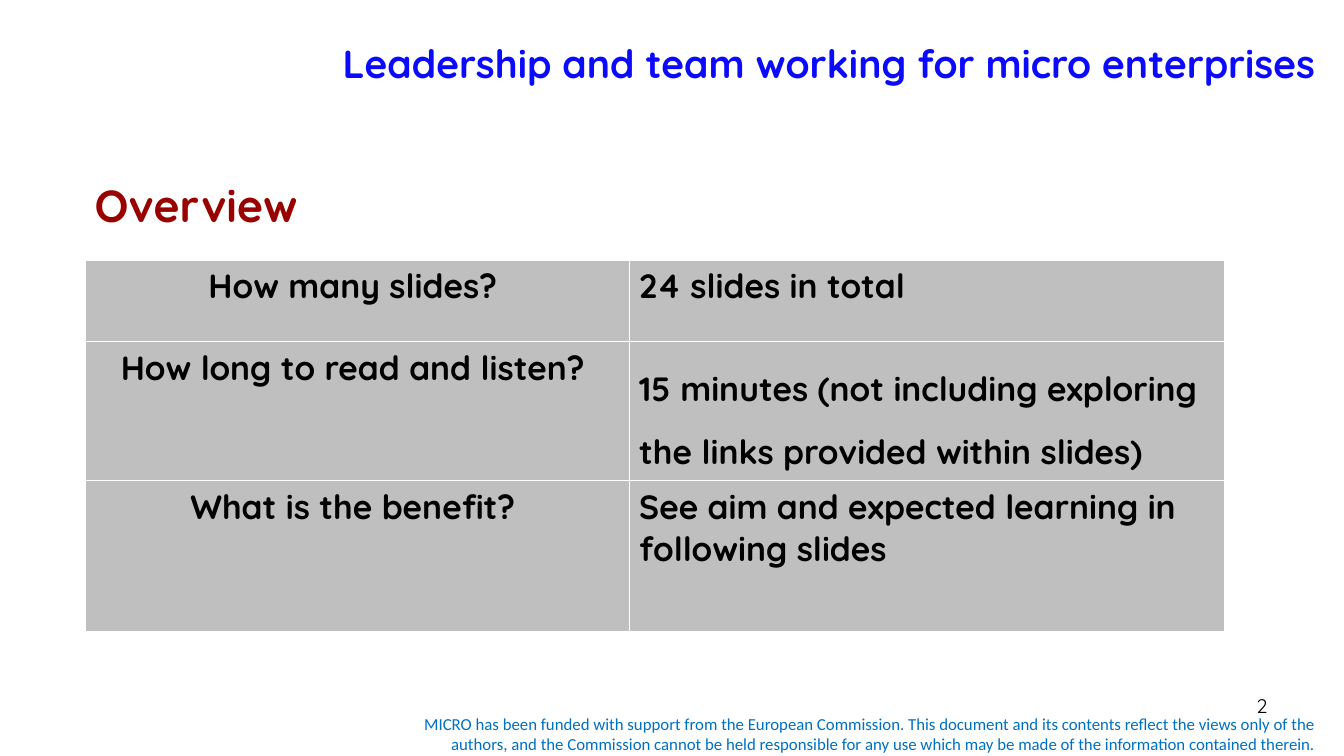
from pptx import Presentation
from pptx.dml.color import RGBColor
from pptx.enum.text import MSO_ANCHOR, PP_ALIGN
from pptx.oxml import parse_xml
from pptx.oxml.ns import nsdecls
from pptx.util import Inches, Pt

HUES = {"blue": "0B0AFD", "red": "990000", "sky": "0070C0",
        "black": "000000", "gray": "BFBFBF", "white": "FFFFFF"}


def write(frame, text, size=24, hue="black", bold=True, font="Quicksand",
          align=PP_ALIGN.LEFT, anchor=MSO_ANCHOR.TOP, gap=None):
    frame.word_wrap = True
    frame.vertical_anchor = anchor
    para = frame.paragraphs[0]
    para.alignment = align
    para.line_spacing = gap
    run = para.add_run()
    run.text = text
    run.font.size = Pt(size)
    run.font.bold = bold
    run.font.name = font
    run.font.color.rgb = RGBColor.from_string(HUES[hue])


deck = Presentation()
deck.slide_width = Inches(13.33)
deck.slide_height = Inches(7.5)
slide = deck.slides.add_slide(deck.slide_layouts[6])

right, mid = PP_ALIGN.RIGHT, MSO_ANCHOR.MIDDLE
notice = ("MICRO has been funded with support from the European Commission. "
          "This document and its contents reflect the views only of the authors, "
          "and the Commission cannot be held responsible for any use which may be "
          "made of the information contained therein.")
boxes = [
    ((3.75, 7.03, 9.4, 0.5), notice,
     dict(size=12, hue="sky", bold=False, font="Calibri", align=right, anchor=mid)),
    ((1.14, 0, 12, 1.25), "Leadership and team working for micro enterprises",
     dict(size=28, hue="blue", align=right, anchor=mid)),
    ((9.56, 6.83, 3.11, 0.52), "2", dict(size=14, bold=False, align=right)),
    ((0.84, 1.71, 2.9, 0.64), "Overview", dict(size=32, hue="red")),
]
for place, text, style in boxes:
    box = slide.shapes.add_textbox(*[Inches(n) for n in place])
    write(box.text_frame, text, **style)

rows = [
    (0.81, "How many slides? ", "24 slides in total", None),
    (1.38, "How long to read and listen? ",
     "15 minutes (not including exploring the links provided within slides)", 1.5),
    (1.5, "What is the benefit? ",
     "See aim and expected learning in following slides", None),
]
grid = slide.shapes.add_table(3, 2, Inches(0.85), Inches(2.58),
                              Inches(11.3), Inches(3.69)).table
for col, width in zip(grid.columns, (5.39, 5.91)):
    col.width = Inches(width)
for row, (height, ask, reply, gap) in zip(grid.rows, rows):
    row.height = Inches(height)
    left, side = row.cells
    write(left.text_frame, ask, align=PP_ALIGN.CENTER)
    write(side.text_frame, reply, gap=gap)
    for cell in (left, side):
        props = cell._tc.get_or_add_tcPr()
        for edge in ("lnL", "lnR", "lnT", "lnB"):
            props.append(parse_xml(
                f'<a:{edge} {nsdecls("a")} w="12700"><a:solidFill>'
                f'<a:srgbClr val="{HUES["white"]}"/></a:solidFill></a:{edge}>'))
        cell.fill.solid()
        cell.fill.fore_color.rgb = RGBColor.from_string(HUES["gray"])

deck.save("out.pptx")
